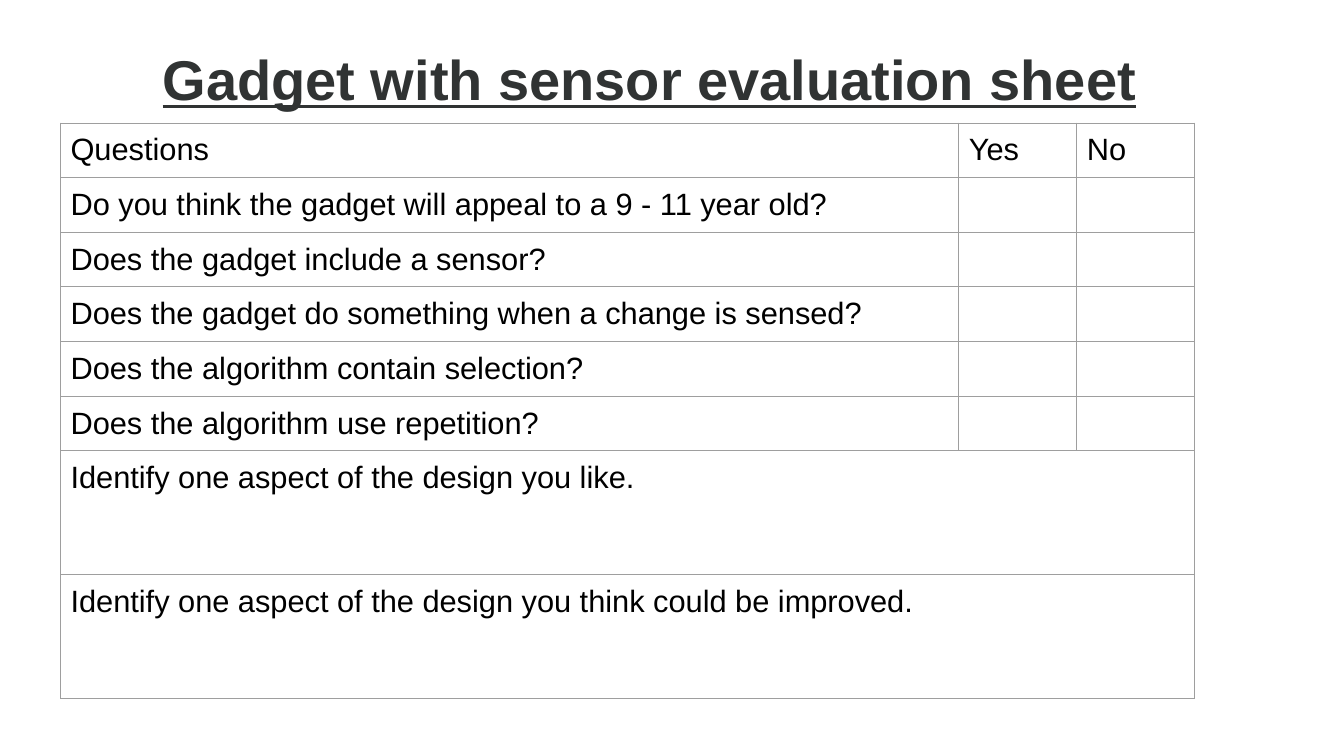
import pptx
import pptx.util
import pptx.dml.color
import pptx.enum.text
import pptx.oxml
import pptx.oxml.ns

Inches = pptx.util.Inches
Pt = pptx.util.Pt
TITLE_GREY = pptx.dml.color.RGBColor(0x30, 0x33, 0x33)
BLACK = pptx.dml.color.RGBColor(0, 0, 0)
BORDER_GREY = pptx.dml.color.RGBColor(0x9E, 0x9E, 0x9E)

HEADING = "Gadget with sensor evaluation sheet"
ANSWERS = ["Yes", "No"]
QUESTIONS = [
    "Do you think the gadget will appeal to a 9 - 11 year old?",
    "Does the gadget include a sensor?",
    "Does the gadget do something when a change is sensed?",
    "Does the algorithm contain selection?",
    "Does the algorithm use repetition?",
]
COMMENTS = [
    "Identify one aspect of the design you like.",
    "Identify one aspect of the design you think could be improved.",
]
COLUMN_WIDTHS = [2.81, 6.1, 1.17, 1.17]
QUESTION_HEIGHT, COMMENT_HEIGHT = 0.54, 1.23
HEADING_FONT = {"name": "Arial", "size": Pt(40), "bold": True, "underline": True}
BODY_FONT = {"name": "Arial", "size": Pt(22), "bold": False}
SIDES = ["left", "right", "top", "bottom"]
CELL_MARGINS = {f"margin_{side}": Inches(0.1) for side in SIDES}
HEADING_FRAME = {f"margin_{side}": 0 for side in SIDES} | {
    "word_wrap": True,
    "auto_size": pptx.enum.text.MSO_AUTO_SIZE.NONE,
    "vertical_anchor": pptx.enum.text.MSO_ANCHOR.TOP,
}


def apply_format(target, values):
    """Set each attribute named in values on the target."""
    for attribute, value in values.items():
        setattr(target, attribute, value)


def add_heading(slide, left, top, width, height):
    """Place the underlined heading in the title placeholder."""
    heading = slide.shapes.title
    box = {"left": left, "top": top, "width": width, "height": height}
    apply_format(heading, {side: Inches(length) for side, length in box.items()})
    apply_format(heading.text_frame, HEADING_FRAME)
    heading.text_frame.text = HEADING
    line = heading.text_frame.paragraphs[0]
    apply_format(line, {"alignment": pptx.enum.text.PP_ALIGN.CENTER,
                        "line_spacing": 1.07, "space_before": Pt(4)})
    apply_format(line.font, HEADING_FONT)
    line.font.color.rgb = TITLE_GREY


def format_cell(cell):
    """Give a cell its margins, font and thin grey borders."""
    apply_format(cell, CELL_MARGINS)
    line = cell.text_frame.paragraphs[0]
    apply_format(line.font, BODY_FONT)
    line.font.color.rgb = BLACK
    cell.fill.background()
    properties = cell._tc.get_or_add_tcPr()
    for position, edge in enumerate(["lnL", "lnR", "lnT", "lnB"]):
        border = pptx.oxml.parse_xml(
            f'<a:{edge} {pptx.oxml.ns.nsdecls("a")} w="{Pt(0.75)}"><a:solidFill>'
            f'<a:srgbClr val="{BORDER_GREY}"/></a:solidFill></a:{edge}>')
        properties.insert(position, border)


def add_evaluation_table(slide, left, top):
    """Build the yes/no questions and the full-width comment rows."""
    labels = ["Questions", *QUESTIONS, *COMMENTS]
    first_comment = len(labels) - len(COMMENTS)
    heights = [QUESTION_HEIGHT] * first_comment + [COMMENT_HEIGHT] * len(COMMENTS)
    evaluation = slide.shapes.add_table(
        len(labels), len(COLUMN_WIDTHS), Inches(left), Inches(top),
        Inches(sum(COLUMN_WIDTHS)), Inches(sum(heights))).table
    apply_format(evaluation, {"first_row": False, "horz_banding": False})
    for column, width in zip(evaluation.columns, COLUMN_WIDTHS):
        column.width = Inches(width)
    for index, (label, height) in enumerate(zip(labels, heights)):
        evaluation.rows[index].height = Inches(height)
        question = evaluation.cell(index, 0)
        question.merge(evaluation.cell(index, 1 if index < first_comment else 3))
        question.text = label
    for column, answer in enumerate(ANSWERS, start=2):
        evaluation.cell(0, column).text = answer
    for cell in evaluation.iter_cells():
        format_cell(cell)


def main():
    """Create the evaluation sheet and save it."""
    deck = pptx.Presentation()
    deck.slide_width, deck.slide_height = Inches(13.33), Inches(7.5)
    slide = deck.slides.add_slide(deck.slide_layouts[5])
    add_heading(slide, 0.9, 0.39, 11.08, 0.61)
    add_evaluation_table(slide, 0.6, 1.22)
    deck.save("out.pptx")


if __name__ == "__main__":
    main()
